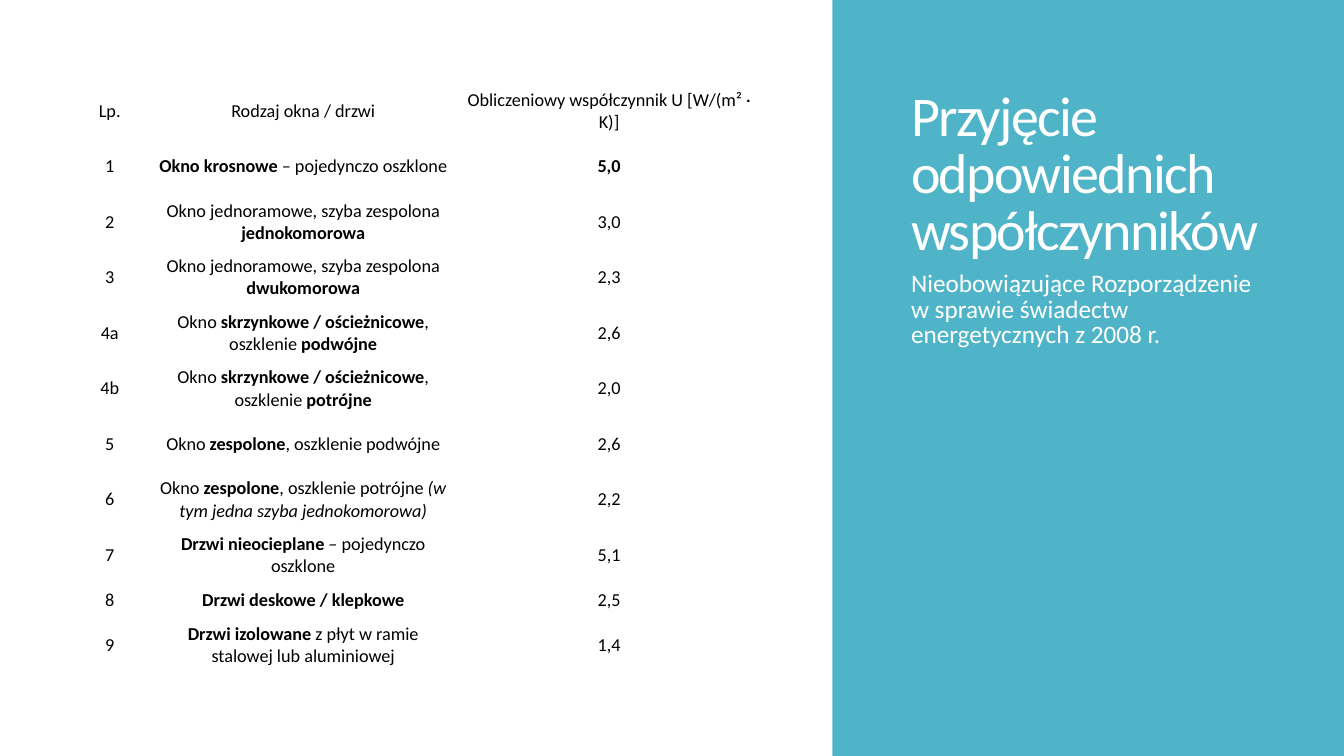
from pptx import Presentation
from pptx.dml.color import RGBColor
from pptx.enum.shapes import MSO_SHAPE
from pptx.enum.text import MSO_ANCHOR, PP_ALIGN
from pptx.util import Cm, Pt

RECTANGLE = MSO_SHAPE.RECTANGLE
TOP, MIDDLE, BOTTOM = MSO_ANCHOR.TOP, MSO_ANCHOR.MIDDLE, MSO_ANCHOR.BOTTOM
CENTER = PP_ALIGN.CENTER

FONT = "Calibri"
WHITE, BLACK, TEAL = "FFFFFF", "000000", "50B4C8"
SLIDE_WIDTH, SLIDE_HEIGHT = 33.87, 19.05

TITLE = "Przyjęcie odpowiednich współczynników"
SUBTITLE = "Nieobowiązujące Rozporządzenie w sprawie świadectw energetycznych z 2008 r."

# Runs are parted by "|"; a leading "*" means bold, "_" means italic
WINDOW_ROWS = [
    ("Lp.", "Rodzaj okna / drzwi", "Obliczeniowy współczynnik U [W/(m² · K)]"),
    ("1", "*Okno krosnowe| – pojedynczo oszklone", "*5,0"),
    ("2", "Okno jednoramowe, szyba zespolona |*jednokomorowa", "3,0"),
    ("3", "Okno jednoramowe, szyba zespolona |*dwukomorowa", "2,3"),
    ("4a", "Okno |*skrzynkowe / ościeżnicowe|, oszklenie |*podwójne", "2,6"),
    ("4b", "Okno |*skrzynkowe / ościeżnicowe|, oszklenie |*potrójne", "2,0"),
    ("5", "Okno |*zespolone|, oszklenie podwójne", "2,6"),
    ("6", "Okno |*zespolone|, oszklenie potrójne |_(w tym jedna szyba jednokomorowa)", "2,2"),
    ("7", "*Drzwi nieocieplane| – pojedynczo oszklone", "5,1"),
    ("8", "*Drzwi deskowe / klepkowe", "2,5"),
    ("9", "*Drzwi izolowane| z płyt w ramie stalowej lub aluminiowej", "1,4"),
]
COLUMN_WIDTHS = [2.03, 7.72, 7.7]
ROW_HEIGHT, SHORT_ROW_HEIGHT, SHORT_ROW = 1.4, 0.87, 9


def color(hex_string):
    return RGBColor.from_string(hex_string)


def set_font(paragraph, size, hex_string):
    paragraph.font.name = FONT
    paragraph.font.size = Pt(size)
    paragraph.font.color.rgb = color(hex_string)


def add_marked_runs(paragraph, marked_text):
    for part in marked_text.split("|"):
        run = paragraph.add_run()
        run.text = part.lstrip("*_")
        if part.startswith("*"):
            run.font.bold = True
        elif part.startswith("_"):
            run.font.italic = True


def add_text(slide, box, text, size, anchor):
    shape = slide.shapes.add_textbox(*map(Cm, box))
    frame = shape.text_frame
    frame.word_wrap = True
    frame.vertical_anchor = anchor
    paragraph = frame.paragraphs[0]
    paragraph.text = text
    paragraph.line_spacing = 0.85
    set_font(paragraph, size, WHITE)
    return paragraph


def add_title_panel(slide, left, top, width, height):
    # Coloured background
    panel = slide.shapes.add_shape(RECTANGLE, Cm(left), Cm(top), Cm(width), Cm(height))
    panel.shadow.inherit = False
    panel.fill.solid()
    panel.fill.fore_color.rgb = color(TEAL)
    panel.line.fill.background()

    # Title sits directly above the subtitle
    text_left, text_width, divide = left + 1.73, 9.45, top + 6.73
    title = add_text(slide, (text_left, top + 1.4, text_width, 5.33), TITLE, 40, BOTTOM)
    title.runs[0].font._element.set("spc", "-120")
    subtitle = add_text(slide, (text_left, divide, text_width, 9.32), SUBTITLE, 18, TOP)
    subtitle.space_before = Pt(13)


def add_window_table(slide, left, top):
    heights = [SHORT_ROW_HEIGHT if row == SHORT_ROW else ROW_HEIGHT
               for row in range(len(WINDOW_ROWS))]
    table = slide.shapes.add_table(
        len(WINDOW_ROWS), len(COLUMN_WIDTHS), Cm(left), Cm(top),
        Cm(sum(COLUMN_WIDTHS)), Cm(sum(heights))).table
    table.first_row = table.horz_banding = False
    for column, width in zip(table.columns, COLUMN_WIDTHS):
        column.width = Cm(width)
    for row, height, texts in zip(table.rows, heights, WINDOW_ROWS):
        row.height = Cm(height)
        for cell, text in zip(row.cells, texts):
            cell.fill.background()
            cell.vertical_anchor = MIDDLE
            cell.margin_left = cell.margin_right = Cm(0.18)
            cell.margin_top = cell.margin_bottom = Cm(0.1)
            paragraph = cell.text_frame.paragraphs[0]
            paragraph.alignment = CENTER
            set_font(paragraph, 13, BLACK)
            add_marked_runs(paragraph, text)


def main():
    presentation = Presentation()
    presentation.slide_width = Cm(SLIDE_WIDTH)
    presentation.slide_height = Cm(SLIDE_HEIGHT)
    slide = presentation.slides.add_slide(presentation.slide_layouts[6])
    panel_left = 20.98
    add_title_panel(slide, panel_left, 0, SLIDE_WIDTH - panel_left, SLIDE_HEIGHT)
    add_window_table(slide, 1.75, 2.1)
    presentation.save("out.pptx")


if __name__ == "__main__":
    main()
